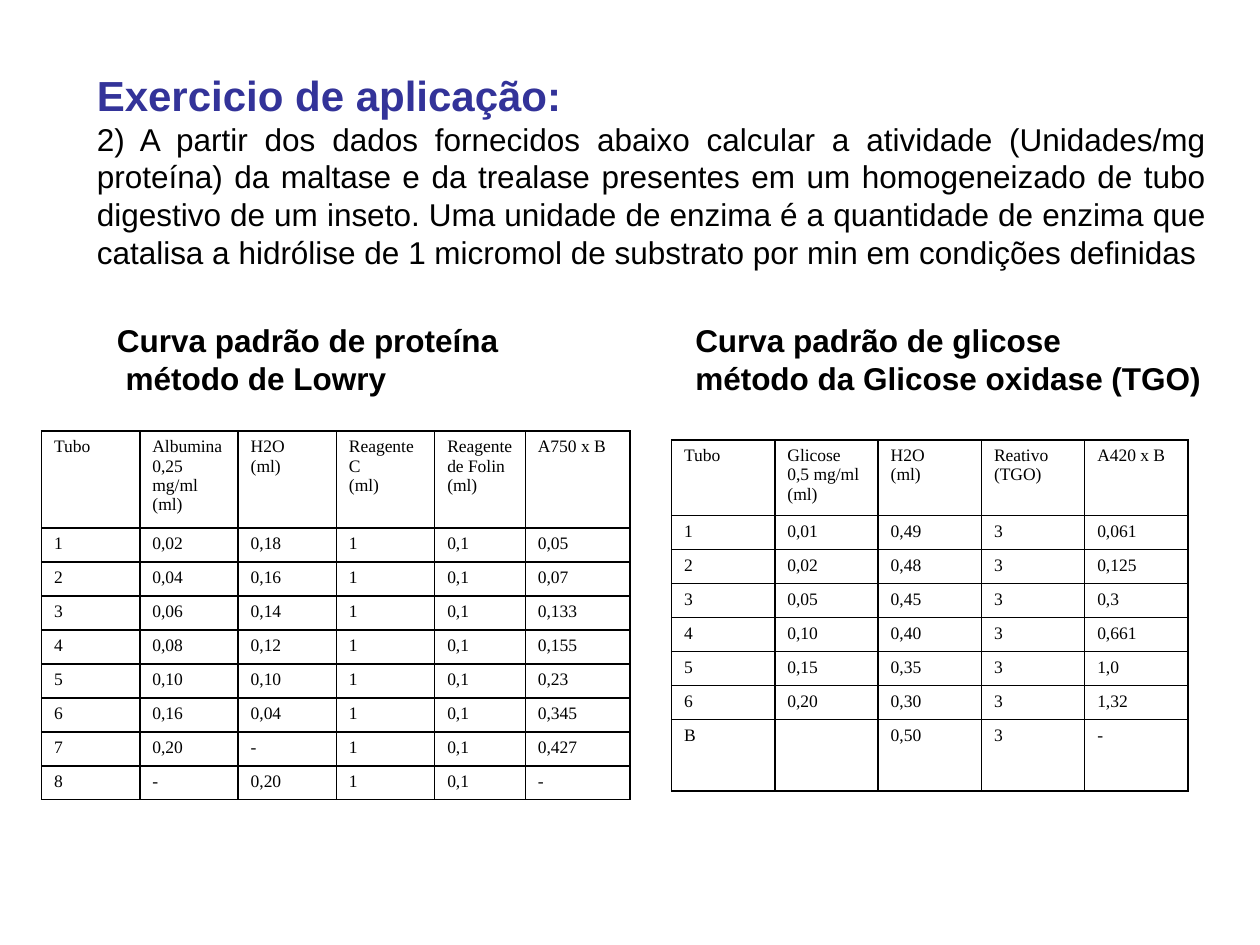
from lxml import etree
from pptx import Presentation
from pptx.dml.color import RGBColor
from pptx.enum.text import PP_ALIGN
from pptx.oxml.ns import qn
from pptx.util import Inches, Pt

LEFT, JUSTIFY = PP_ALIGN.LEFT, PP_ALIGN.JUSTIFY
BLACK, BLUE = "000000", "333399"


def colour(code):
    return RGBColor.from_string(code)


class ExercisePage:
    """Holds the style and the current slide."""

    text_font, table_font = "Arial", "Times New Roman"
    body_size, table_size = 18, 10
    border_width = Pt(1)

    def __init__(self, deck):
        self.slide = deck.slides.add_slide(deck.slide_layouts[6])

    def style(self, paragraph, name, size, code=BLACK, bold=False):
        font = paragraph.font
        font.name, font.size, font.bold = name, Pt(size), bold
        font.color.rgb = colour(code)

    def text(self, left, top, width, height, lines, align=LEFT, wrap=True):
        """Each line is (wording, size, colour, bold)."""
        box = self.slide.shapes.add_textbox(
            Inches(left), Inches(top), Inches(width), Inches(height))
        frame = box.text_frame
        frame.word_wrap = wrap
        for index, (wording, size, code, bold) in enumerate(lines):
            paragraph = frame.add_paragraph() if index else frame.paragraphs[0]
            paragraph.text = wording
            paragraph.alignment = align
            self.style(paragraph, self.text_font, size, code, bold)

    def heading(self, left, top, width, height, lines, wrap=True):
        self.text(left, top, width, height,
                  [(line, self.body_size, BLACK, True) for line in lines], wrap=wrap)

    def borders(self, cell):
        properties = cell._tc.get_or_add_tcPr()
        for position, side in enumerate(("a:lnL", "a:lnR", "a:lnT", "a:lnB")):
            line = etree.Element(qn(side), w=str(self.border_width))
            fill = etree.SubElement(line, qn("a:solidFill"))
            etree.SubElement(fill, qn("a:srgbClr"), val=BLACK)
            properties.insert(position, line)

    def table(self, left, top, widths, heights, rows):
        frame = self.slide.shapes.add_table(
            len(rows), len(widths), Inches(left), Inches(top),
            Inches(sum(widths)), Inches(sum(heights)))
        table = frame.table
        table.first_row = table.horz_banding = False
        for column, width in zip(table.columns, widths):
            column.width = Inches(width)
        for row, height, values in zip(table.rows, heights, rows):
            row.height = Inches(height)
            for cell, value in zip(row.cells, values):
                cell.text = value
                cell.fill.background()
                self.borders(cell)
                for paragraph in cell.text_frame.paragraphs:
                    self.style(paragraph, self.table_font, self.table_size)


PROTEIN_ROWS = [
    ("Tubo", "Albumina\n0,25 mg/ml\n(ml)", "H2O\n(ml)", "Reagente C\n(ml)",
     "Reagente de Folin\n(ml)", "A750 x B"),
    ("1", "0,02", "0,18", "1", "0,1", "0,05"),
    ("2", "0,04", "0,16", "1", "0,1", "0,07"),
    ("3", "0,06", "0,14", "1", "0,1", "0,133"),
    ("4", "0,08", "0,12", "1", "0,1", "0,155"),
    ("5", "0,10", "0,10", "1", "0,1", "0,23"),
    ("6", "0,16", "0,04", "1", "0,1", "0,345"),
    ("7", "0,20", "-", "1", "0,1", "0,427"),
    ("8", "-", "0,20", "1", "0,1", "-"),
]
GLUCOSE_ROWS = [
    ("Tubo", "Glicose\n0,5 mg/ml\n(ml)", "H2O\n(ml)", "Reativo (TGO)", "A420 x B"),
    ("1", "0,01", "0,49", "3", "0,061"),
    ("2", "0,02", "0,48", "3", "0,125"),
    ("3", "0,05", "0,45", "3", "0,3"),
    ("4", "0,10", "0,40", "3", "0,661"),
    ("5", "0,15", "0,35", "3", "1,0"),
    ("6", "0,20", "0,30", "3", "1,32"),
    ("B", "", "0,50", "3", "-"),
]
QUESTION = (
    "2) A partir dos dados fornecidos abaixo calcular a atividade (Unidades/mg "
    "proteína) da maltase e da trealase presentes em um homogeneizado de tubo "
    "digestivo de um inseto. Uma unidade de enzima é a quantidade de enzima que "
    "catalisa a hidrólise de 1 micromol de substrato por min em condições definidas ")


def main():
    deck = Presentation()
    deck.slide_width, deck.slide_height = Inches(10), Inches(7.5)
    page = ExercisePage(deck)

    # Exercise statement
    page.text(0.67, 0.5, 9, 1.7,
              [("Exercicio de aplicação:", 24, BLUE, True),
               (QUESTION, page.body_size, BLACK, False)], JUSTIFY)

    # Protein standard curve
    page.table(0.33, 3.42, [0.78] * 4 + [0.72, 0.83], [0.77] + [0.27] * 8, PROTEIN_ROWS)
    page.heading(0.83, 2.5, 3.3, 0.95,
                 ["Curva padrão de proteína", " método de Lowry"], wrap=False)

    # Glucose standard curve
    page.table(5.33, 3.49, [0.82] * 5, [0.6] + [0.27] * 6 + [0.57], GLUCOSE_ROWS)
    page.heading(5.42, 2.5, 4.33, 0.7,
                 ["Curva padrão de glicose", "método da Glicose oxidase (TGO)"])

    deck.save("out.pptx")


if __name__ == "__main__":
    main()
